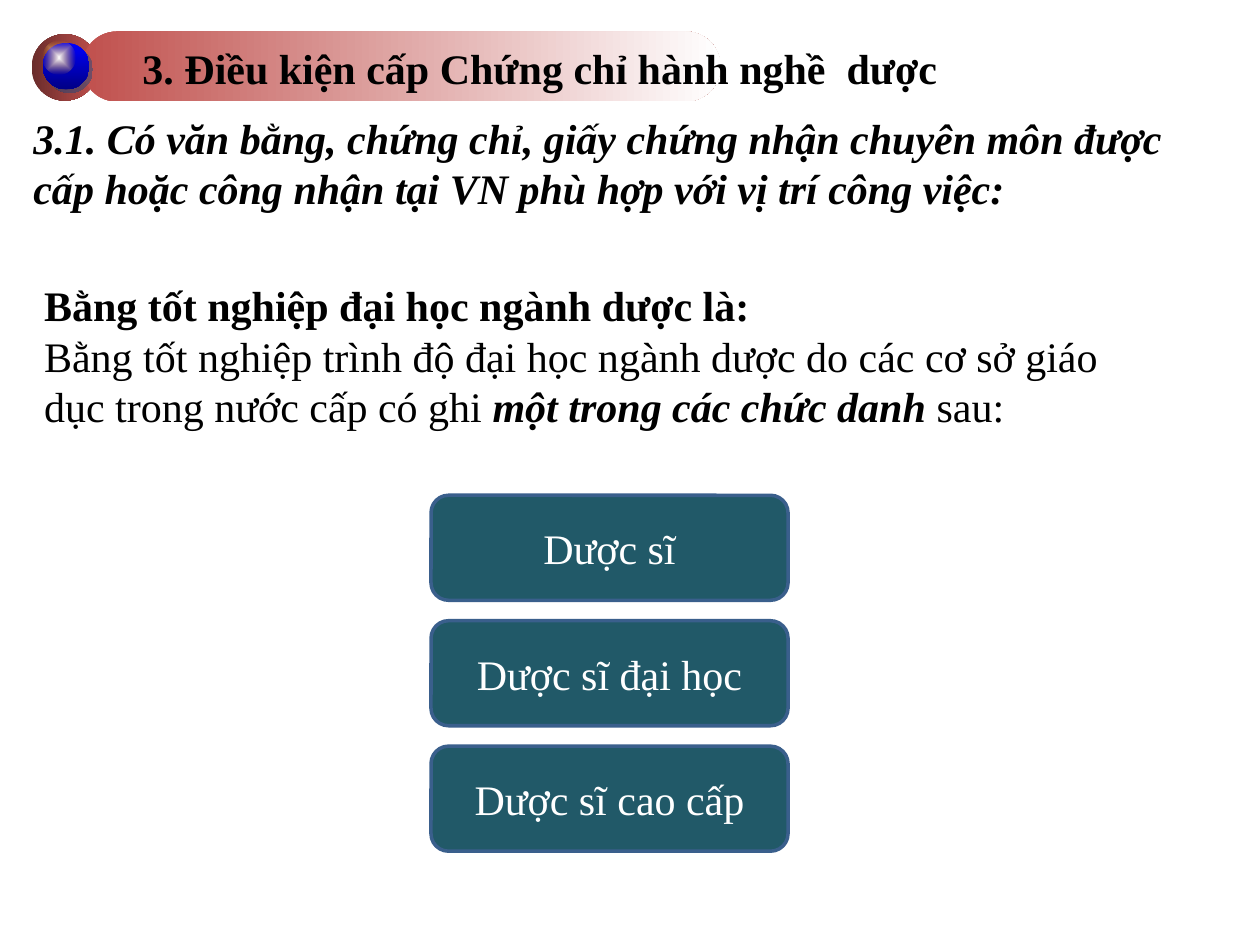
from dataclasses import dataclass

from lxml.etree import SubElement as Sub
from pptx import Presentation
from pptx.dml.color import RGBColor as Rgb
from pptx.enum.shapes import MSO_SHAPE as Kind
from pptx.enum.text import MSO_ANCHOR as Anchor, MSO_AUTO_SIZE as Auto, PP_ALIGN as Align
from pptx.oxml.ns import qn
from pptx.util import Pt

HUES = {
    "ink": "000000", "white": "FFFFFF", "teal": "215968", "edge": "3A5F8C",
    "red": "C0504D", "maroon": "6A2C2B", "blue": "0000FF", "navy": "000085",
    "amber": "E9940B", "shade": "1F497D",
}
FONT = {"name": "Times New Roman", "size": Pt(24)}


@dataclass
class Box:
    x: float
    y: float
    w: float
    h: float

    def lens(self) -> list:
        return [Pt(v) for v in (self.x, self.y, self.w, self.h)]


@dataclass
class Part:
    kind: Kind
    box: Box
    start: str
    end: str
    angle: int = 0


@dataclass
class Run:
    text: str
    bold: bool = False
    italic: bool = False


def color(name: str) -> Rgb:
    return Rgb.from_string(HUES[name])


def write(para, runs: list[Run], hue: str = "ink") -> None:
    for item in runs:
        run = para.add_run()
        run.text = item.text
        style = {**FONT, "bold": item.bold, "italic": item.italic}
        for key, val in style.items():
            setattr(run.font, key, val)
        run.font.color.rgb = color(hue)


def fill_text(shape, box: Box, paras: list[list[Run]], wrap: bool = True) -> None:
    """Place a text shape and write plain left-aligned paragraphs."""
    shape.left, shape.top, shape.width, shape.height = box.lens()
    frame = shape.text_frame
    form = {"word_wrap": wrap, "auto_size": Auto.NONE, "vertical_anchor": Anchor.TOP}
    for key, val in form.items():
        setattr(frame, key, val)
    for i, runs in enumerate(paras):
        para = frame.add_paragraph() if i else frame.paragraphs[0]
        para.alignment = Align.LEFT
        para.space_before = Pt(0)
        props = para._p.get_or_add_pPr()
        props.set("marL", "0")
        props.set("indent", "0")
        Sub(props, qn("a:buNone"))
        write(para, runs)


def add_part(slide, part: Part):
    """Draw a borderless shape with a two-colour gradient."""
    shape = slide.shapes.add_shape(part.kind, *part.box.lens())
    shape.shadow.inherit = False
    shape.line.fill.background()
    shape.fill.gradient()
    shape.fill.gradient_angle = part.angle
    for stop, hue, pos in zip(shape.fill.gradient_stops, (part.start, part.end), (0, 1)):
        stop.color.rgb = color(hue)
        stop.position = pos
    return shape


def add_shade(shape) -> None:
    """Cast a soft-coloured shadow to the lower right."""
    effects = shape._element.spPr.find(qn("a:effectLst"))
    cast = Sub(effects, qn("a:outerShdw"), dist="35560", dir="2700000", algn="ctr", rotWithShape="0")
    tint = Sub(cast, qn("a:srgbClr"), val=HUES["shade"])
    Sub(tint, qn("a:alpha"), val="50000")


def add_glow(shape) -> None:
    """Turn the gradient into one that fades out from the centre."""
    grad = shape._element.spPr.find(qn("a:gradFill"))
    grad.remove(grad.find(qn("a:lin")))
    ring = Sub(grad, qn("a:path"), path="shape")
    Sub(ring, qn("a:fillToRect"), l="50000", t="50000", r="50000", b="50000")
    Sub(grad.findall(".//" + qn("a:srgbClr"))[-1], qn("a:alpha"), val="0")


def add_card(slide, box: Box, text: str) -> None:
    card = slide.shapes.add_shape(Kind.ROUNDED_RECTANGLE, *box.lens())
    card.shadow.inherit = False
    card.fill.solid()
    card.fill.fore_color.rgb = color("teal")
    card.line.color.rgb = color("edge")
    card.line.width = Pt(2)
    card.text_frame.word_wrap = True
    card.text_frame.vertical_anchor = Anchor.MIDDLE
    para = card.text_frame.paragraphs[0]
    para.alignment = Align.CENTER
    write(para, [Run(text)], "white")


def main() -> None:
    deck = Presentation()
    deck.slide_width, deck.slide_height = Pt(720), Pt(540)
    slide = deck.slides.add_slide(deck.slide_layouts[1])
    title, body = slide.placeholders

    # Header: disc, bar and glossy ball
    add_part(slide, Part(Kind.OVAL, Box(18, 19.5, 38, 38), "maroon", "red"))
    bar = add_part(slide, Part(Kind.ROUNDED_RECTANGLE, Box(46.8, 18, 365, 40), "red", "white"))
    bar.adjustments[0] = 0.5
    ball = add_part(slide, Part(Kind.OVAL, Box(24.5, 24.5, 26.6, 26.6), "blue", "navy", 270))
    add_shade(ball)
    shine = add_part(slide, Part(Kind.OVAL, Box(24.5, 23, 18.7, 19.4), "white", "amber"))
    add_glow(shine)

    # Title, brought in front of the bar
    fill_text(title, Box(74.2, 20.9, 473, 36),
              [[Run("3. Điều kiện cấp Chứng chỉ hành nghề  dược", True)]], False)
    title._element.getparent().append(title._element)

    # Subheading and body
    head = slide.shapes.add_textbox(0, 0, 0, 0)
    fill_text(head, Box(12, 60.5, 666, 65.5), [[Run(
        "3.1. Có văn bằng, chứng chỉ, giấy chứng nhận chuyên môn được "
        "cấp hoặc công nhận tại VN phù hợp với vị trí công việc:", True, True)]])
    fill_text(body, Box(18, 156.2, 656, 94.5), [
        [Run("Bằng tốt nghiệp đại học ngành dược là:", True)],
        [Run("Bằng tốt nghiệp trình độ đại học ngành dược do các cơ sở giáo "
             "dục trong nước cấp có ghi "),
         Run("một trong các chức danh ", True, True), Run("sau:")],
    ])

    # Stack of degree titles
    for i, text in enumerate(("Dược sĩ", "Dược sĩ đại học", "Dược sĩ cao cấp")):
        add_card(slide, Box(246.3, 283 + 71.7 * i, 204, 60), text)

    deck.save("out.pptx")


if __name__ == "__main__":
    main()
